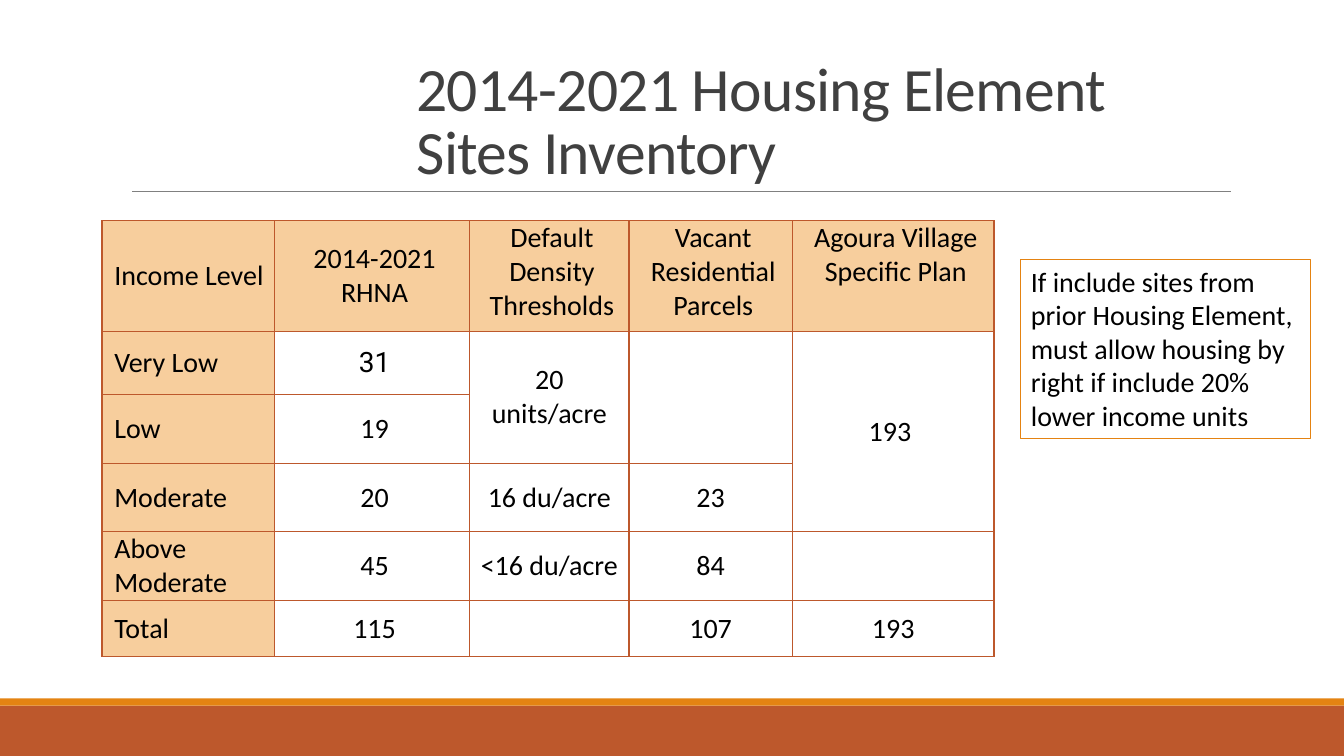
from dataclasses import dataclass

from lxml.etree import SubElement
from pptx import Presentation
from pptx.dml.color import RGBColor
from pptx.enum.shapes import MSO_CONNECTOR, MSO_SHAPE
from pptx.enum.text import MSO_ANCHOR, MSO_AUTO_SIZE, PP_ALIGN
from pptx.oxml import parse_xml
from pptx.oxml.ns import nsdecls, qn
from pptx.util import Cm, Pt


@dataclass(frozen=True)
class Theme:
    """Colours, fonts and type sizes of the slide."""
    rust: str = "BD582C"
    orange: str = "E48312"
    peach: str = "F7CE9D"
    grey: str = "808080"
    title: str = "404040"
    text: str = "000000"
    font: str = "Calibri"
    accent_font: str = "Roboto"
    title_size: int = 44
    body_size: int = 20


THEME = Theme()
COLUMNS = [4.34, 4.93, 4.01, 4.12, 5.08]
ROWS = [2.79, 1.6, 1.72, 1.73, 1.73, 1.42]
CELLS = [
    ["Income Level", "2014-2021 RHNA", "Default Density Thresholds",
     "Vacant Residential Parcels", "Agoura Village Specific Plan"],
    ["Very Low", "31", "20 units/acre", "", "193 "],
    ["Low", "19", "", "", ""],
    ["Moderate", "20", "16 du/acre", "23", ""],
    ["Above Moderate", "45", "<16 du/acre", "84", ""],
    ["Total", "115", "", "107", "193"],
]
MERGES = [(1, 2, 2), (1, 3, 2), (1, 4, 3)]


def rgb(value):
    """Return a colour object for a hex value."""
    return RGBColor.from_string(value)


def set_font(p, size, color, name=THEME.font):
    """Set the font of a paragraph."""
    p.font.name = name
    p.font.size = Pt(size)
    p.font.bold = False
    p.font.color.rgb = rgb(color)


def add_band(s, top, height, color):
    """Add a full-width coloured band."""
    sp = s.shapes.add_shape(MSO_SHAPE.RECTANGLE, Cm(0), Cm(top), Cm(33.87), Cm(height))
    sp.shadow.inherit = False
    sp.fill.solid()
    sp.fill.fore_color.rgb = rgb(color)
    sp.line.fill.background()


def add_rule(s, left, right, y):
    """Add the thin horizontal line under the title."""
    line = s.shapes.add_connector(MSO_CONNECTOR.STRAIGHT, Cm(left), Cm(y), Cm(right), Cm(y))
    line.line.color.rgb = rgb(THEME.grey)
    line.line.width = Pt(0.5)
    SubElement(line._element.spPr, qn("a:effectLst"))


def set_title(s, text):
    """Place and format the title placeholder."""
    sp = s.shapes.title
    sp.left, sp.top, sp.width, sp.height = Cm(10.24), Cm(0.79), Cm(20.75), Cm(4.04)
    tf = sp.text_frame
    tf.word_wrap = True
    tf.auto_size = MSO_AUTO_SIZE.NONE
    tf.vertical_anchor = MSO_ANCHOR.BOTTOM
    p = tf.paragraphs[0]
    p.alignment = PP_ALIGN.LEFT
    p.line_spacing = 0.85
    r = p.add_run()
    r.text = text
    r._r.get_or_add_rPr().set("spc", "-50")
    set_font(p, THEME.title_size, THEME.title)


def set_borders(cell):
    """Draw all four borders of a table cell."""
    for side in ("lnL", "lnR", "lnT", "lnB"):
        cell._tc.get_or_add_tcPr().append(parse_xml(
            f'<a:{side} {nsdecls("a")} w="{Pt(1)}"><a:solidFill>'
            f'<a:srgbClr val="{THEME.rust}"/></a:solidFill></a:{side}>'))


def format_cell(cell, text, row, col):
    """Fill in and format one table cell."""
    set_borders(cell)
    if row == 0 or col == 0:
        cell.fill.solid()
        cell.fill.fore_color.rgb = rgb(THEME.peach)
    else:
        cell.fill.background()
    cell.margin_left = cell.margin_right = Cm(0.18)
    cell.margin_top = cell.margin_bottom = Cm(0)
    top = row == 0 and col >= 2
    cell.vertical_anchor = MSO_ANCHOR.TOP if top else MSO_ANCHOR.MIDDLE
    p = cell.text_frame.paragraphs[0]
    p.alignment = PP_ALIGN.CENTER if col else PP_ALIGN.LEFT
    if row == 0 or col < 2:
        p._p.get_or_add_pPr().set("marL", str(Cm(0.13)))
        p.space_before = Pt(1 if top else 0)
        p.space_after = Pt(1)
    if text:
        p.add_run().text = text
    set_font(p, THEME.body_size, THEME.text,
             THEME.accent_font if (row, col) == (1, 1) else THEME.font)


def add_inventory(s, left, top):
    """Add the sites inventory table."""
    frame = s.shapes.add_table(len(ROWS), len(COLUMNS), Cm(left), Cm(top),
                               Cm(sum(COLUMNS)), Cm(sum(ROWS)))
    table = frame.table
    table.first_row = table.horz_banding = False
    for column, width in zip(table.columns, COLUMNS):
        column.width = Cm(width)
    for row, height in zip(table.rows, ROWS):
        row.height = Cm(height)
    for i, values in enumerate(CELLS):
        for j, text in enumerate(values):
            format_cell(table.cell(i, j), text, i, j)
    for row, col, span in MERGES:
        table.cell(row, col).merge(table.cell(row + span - 1, col))


def add_note(s, left, top, width, height, text):
    """Add the outlined note box."""
    sp = s.shapes.add_shape(MSO_SHAPE.RECTANGLE, Cm(left), Cm(top), Cm(width), Cm(height))
    sp.shadow.inherit = False
    sp.fill.background()
    sp.line.color.rgb = rgb(THEME.orange)
    sp.line.width = Pt(0.75)
    tf = sp.text_frame
    tf.word_wrap = True
    tf.auto_size = MSO_AUTO_SIZE.SHAPE_TO_FIT_TEXT
    tf.vertical_anchor = MSO_ANCHOR.TOP
    p = tf.paragraphs[0]
    p.alignment = PP_ALIGN.LEFT
    p.add_run().text = text
    set_font(p, THEME.body_size, THEME.text)


def main():
    """Build the slide and save it."""
    prs = Presentation()
    prs.slide_width, prs.slide_height = Cm(33.87), Cm(19.05)
    s = prs.slides.add_slide(prs.slide_layouts[5])
    add_band(s, 17.78, 1.27, THEME.rust)
    add_band(s, 17.6, 0.18, THEME.orange)
    add_rule(s, 3.33, 31.01, 4.83)
    set_title(s, "2014-2021 Housing Element Sites Inventory")
    add_inventory(s, 2.57, 5.56)
    add_note(s, 25.73, 6.53, 7.29, 4.52,
             "If include sites from prior Housing Element, must allow housing by "
             "right if include 20% lower income units")
    prs.save("out.pptx")


if __name__ == "__main__":
    main()
